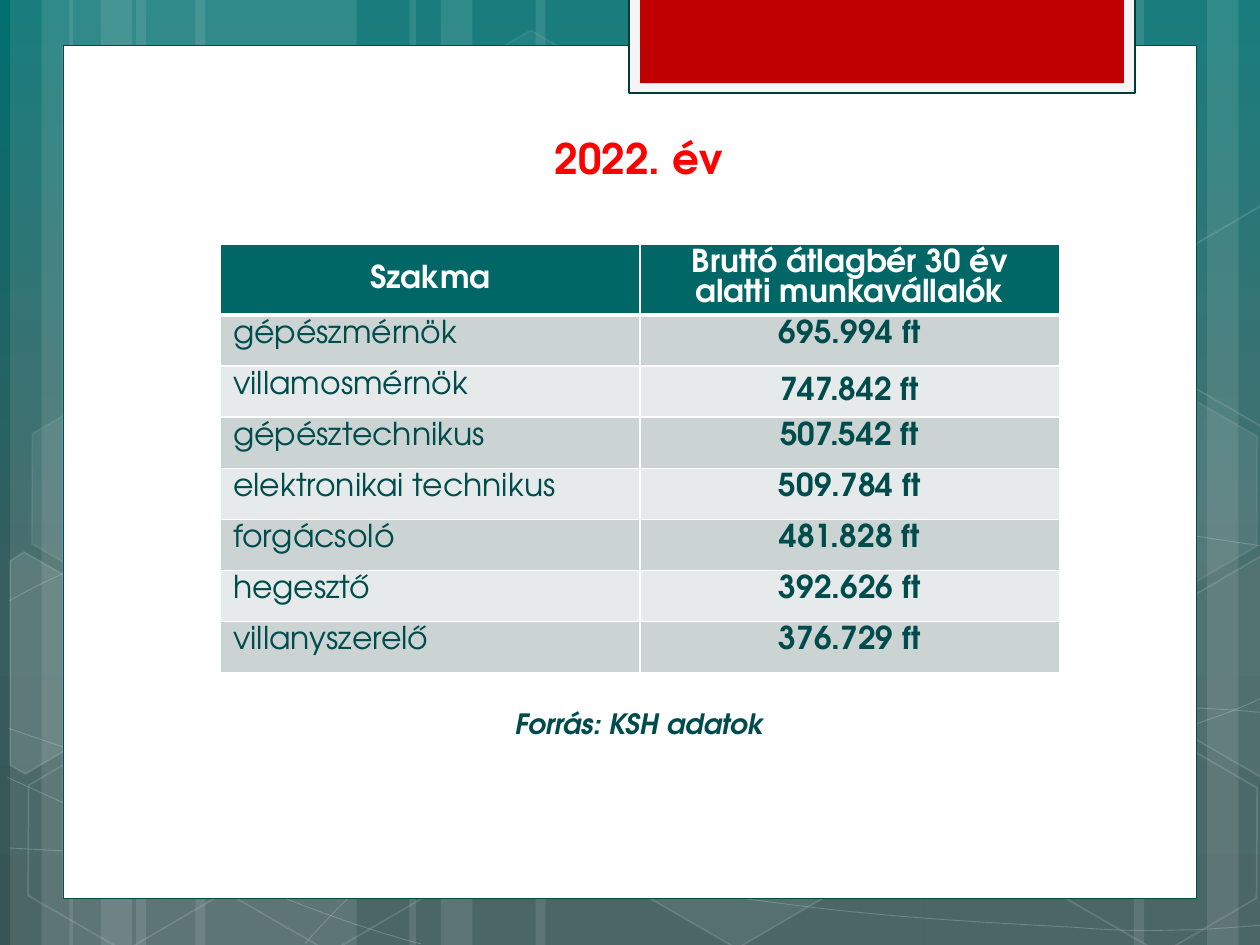
from copy import deepcopy
from dataclasses import dataclass
from math import cos, radians, sin
from lxml import etree
from pptx import Presentation
from pptx import util as u
from pptx.dml.color import RGBColor
from pptx.enum import shapes, text
from pptx.oxml.ns import qn

SCALE = 9144
TILT = 30


@dataclass(frozen=True)
class Theme:
    font: str = "TeX Gyre Adventor"
    white: str = "FFFFFF"
    ink: str = "004C4C"
    tab: str = "C00000"
    tab_rim: str = "F5F5F5"
    tab_edge: str = "003B3C"
    year: str = "FF0000"
    header: str = "006666"
    bands: tuple = ("CCD3D3", "E7EAEA")
    sky: tuple = ((0, "006F6F"), (0.62, "375D5D"), (1, "385555"))
    year_size: int = 24
    table_size: int = 18
    credit_size: int = 16


THEME = Theme()
RECT = shapes.MSO_SHAPE.RECTANGLE
CENTER = text.PP_ALIGN.CENTER
MIDDLE = text.MSO_ANCHOR.MIDDLE

STRIPES = [(108, 175), (8, 50), (33, 83), (155, 175), (55, 50), (80, 83),
           (733, 175), (958, 50), (900, 83), (425, 308), (325, 50), (350, 83)]

WAVES = [
    [(7, 673), (61, 676), (115, 679), (190, 678), (265, 677), (358, 675), (458, 665),
     (558, 655), (700, 636), (792, 617), (883, 598), (977, 568), (1007, 551)],
    [(7, 477), (36, 461), (65, 446), (121, 431), (178, 416), (259, 394), (347, 387),
     (436, 380), (544, 379), (654, 387), (764, 395), (947, 426), (1007, 434)],
    [(6, 617), (127, 672), (247, 727), (334, 749)],
    [(7, 578), (38, 589), (70, 600), (128, 616), (186, 631), (273, 656), (357, 673),
     (440, 690), (545, 708), (628, 718), (711, 729), (800, 733), (853, 736),
     (905, 740), (919, 738), (945, 738), (971, 737), (989, 735), (1007, 734)],
    [(242, 749), (260, 729), (278, 709), (302, 691), (326, 673), (360, 653), (388, 639),
     (416, 625), (433, 619), (470, 609), (506, 599), (573, 585), (608, 578),
     (644, 571), (649, 571), (680, 569), (711, 566), (760, 563), (794, 562),
     (829, 561), (886, 562), (886, 562), (908, 562), (931, 562), (953, 562),
     (971, 563), (988, 564), (1006, 566)],
]

HEXAGONS = [(334, 36, 4, 8), (497, 589, 6, 12), (11, 591, 0, 12), (14, 312, 7, 8),
            (174, 592, 0, 12), (753, 453, 10, 12), (834, 593, 0, 12), (834, 314, 7, 8)]

CUT_HEXAGONS = [
    ([(8, 445), (19, 438), (96, 482), (95, 570), (20, 614), (8, 607)], (36, 535), 10),
    ([(926, 485), (1001, 441), (1009, 446), (1009, 613), (1002, 617), (926, 573)],
     (985, 520), 4),
    ([(926, 207), (1001, 163), (1010, 168), (1009, 335), (1002, 339), (926, 295)],
     (985, 241), 0),
]

WAGES = [("Szakma", "Bruttó átlagbér 30 év alatti munkavállalók"),
         ("gépészmérnök", "695.994 ft"),
         ("villamosmérnök", "747.842 ft"),
         ("gépésztechnikus", "507.542 ft"),
         ("elektronikai technikus", "509.784 ft"),
         ("forgácsoló", "481.828 ft"),
         ("hegesztő", "392.626 ft"),
         ("villanyszerelő", "376.729 ft")]
MIDDLE_CELLS = {(0, 0), (2, 1)}


def px(length):
    return u.Emu(round(length * SCALE))


def rgb(value):
    return RGBColor.from_string(value)


def assign(target, values):
    for key, value in values.items():
        setattr(target, key, value)


def paint(part, fill=None, opacity=100, line=None, width=1, line_opacity=100):
    part.shadow.inherit = False
    for target, color, alpha in ((part.fill, fill, opacity),
                                 (part.line.fill, line, line_opacity)):
        if color is None or alpha == 0:
            target.background()
            continue
        target.solid()
        target.fore_color.rgb = rgb(color)
        if alpha < 100:
            tint = target._xPr.find(qn("a:solidFill"))[0]
            etree.SubElement(tint, qn("a:alpha"), val=str(alpha * 1000))
    if line:
        part.line.width = u.Pt(width)


def block(slide, box, kind=RECT, **look):
    part = slide.shapes.add_shape(kind, *map(px, box))
    paint(part, **look)
    return part


def outline(slide, points, origin, close, **look):
    placed = [(px(origin[0] + x), px(origin[1] + y)) for x, y in points]
    builder = slide.shapes.build_freeform(*placed[0], scale=1.0)
    builder.add_line_segments(placed[1:], close=close)
    part = builder.convert_to_shape()
    paint(part, **look)
    return part


def bend(part):
    segments = part._element.findall(".//" + qn("a:lnTo"))
    for start in range(0, len(segments), 3):
        first, *rest = segments[start:start + 3]
        first.addprevious(curve := etree.Element(qn("a:cubicBezTo")))
        for segment in (first, *rest):
            curve.append(segment[0])
            segment.getparent().remove(segment)


def untilt(point, pivot):
    dx, dy = point[0] - pivot[0], point[1] - pivot[1]
    c, s = cos(radians(TILT)), sin(radians(TILT))
    return pivot[0] + dx * c + dy * s, pivot[1] - dx * s + dy * c


def write(frame, words, size, color, align=None, **style):
    paragraph = frame.paragraphs[0]
    paragraph.alignment = align
    run = paragraph.add_run()
    run.text = words
    assign(run.font, {"name": THEME.font, "size": u.Pt(size), **style})
    run.font.color.rgb = rgb(color)


def sky(slide):
    fill = slide.background.fill
    fill.gradient()
    fill.gradient_angle = 270
    stops = slide._element.find(".//" + qn("a:gsLst"))
    stops.insert(1, deepcopy(stops[0]))
    for stop, (position, color) in zip(fill.gradient_stops, THEME.sky):
        stop.position = position
        stop.color.rgb = rgb(color)


def backdrop(slide, box):
    left, top, _, height = box
    for x, width in STRIPES:
        block(slide, (left + x, top, width, height), fill=THEME.white, opacity=10)
    for knots in WAVES:
        bend(outline(slide, knots, (left, top), False,
                     line=THEME.white, width=0.5, line_opacity=20))
    for x, y, opacity, line_opacity in HEXAGONS:
        hexagon = block(slide, (left + x, top + y, 175, 152), shapes.MSO_SHAPE.HEXAGON,
                        fill=THEME.white, opacity=opacity,
                        line=THEME.white, line_opacity=line_opacity)
        hexagon.rotation = TILT
        hexagon.adjustments[0] = 0.285
    for points, pivot, opacity in CUT_HEXAGONS:
        corners = [untilt(point, pivot) for point in points]
        outline(slide, corners, (left, top), True, fill=THEME.white, opacity=opacity,
                line=THEME.white, line_opacity=12).rotation = TILT


def sheet(slide, box):
    left, top, _, _ = box
    block(slide, box, fill=THEME.white, line=THEME.ink, width=0.5)
    block(slide, (left + 449, top - 38, 402, 76), fill=THEME.tab_rim,
          line=THEME.tab_edge, width=1.25)
    block(slide, (left + 458, top - 38, 384, 68), fill=THEME.tab)


def caption(slide, box, words, size, color, **style):
    frame = slide.shapes.add_textbox(*map(px, box)).text_frame
    frame.word_wrap = True
    write(frame, words, size, color, CENTER, **style)


def rule_cell(cell, row):
    widths = {"L": 1, "R": 1, "T": 3 if row == 1 else 1, "B": 3 if row == 0 else 1}
    properties = cell._tc.get_or_add_tcPr()
    for index, (side, width) in enumerate(widths.items()):
        edge = etree.Element(qn("a:ln" + side), w=str(u.Pt(width)))
        solid = etree.SubElement(edge, qn("a:solidFill"))
        etree.SubElement(solid, qn("a:srgbClr"), val=THEME.white)
        properties.insert(index, edge)


def wage_table(slide, box, header_height):
    table = slide.shapes.add_table(len(WAGES), 2, *map(px, box)).table
    row_height = (box[3] - header_height) / (len(WAGES) - 1)
    for column in table.columns:
        column.width = px(box[2] / 2)
    for r, entry in enumerate(WAGES):
        table.rows[r].height = px(row_height if r else header_height)
        for c, words in enumerate(entry):
            cell = table.cell(r, c)
            assign(cell, {"margin_left": px(10), "margin_right": px(10),
                          "margin_top": px(4), "margin_bottom": px(4)})
            if (r, c) in MIDDLE_CELLS:
                cell.vertical_anchor = MIDDLE
            cell.fill.solid()
            cell.fill.fore_color.rgb = rgb(THEME.bands[(r - 1) % 2] if r else THEME.header)
            rule_cell(cell, r)
            write(cell.text_frame, words, THEME.table_size,
                  THEME.ink if r else THEME.white,
                  text.PP_ALIGN.LEFT if r and not c else CENTER, bold=not r or c == 1)


def main():
    deck = Presentation()
    assign(deck, {"slide_width": px(1000), "slide_height": px(750)})
    slide = deck.slides.add_slide(deck.slide_layouts[6])
    sky(slide)
    backdrop(slide, (0, 0, 1000, 750))
    sheet(slide, (50, 36, 900, 677))
    wage_table(slide, (175, 194, 666, 340), 56)
    caption(slide, (279, 556, 457, 37), "Forrás: KSH adatok",
            THEME.credit_size, THEME.ink, bold=True, italic=True)
    caption(slide, (330, 100, 354, 50), "2022. év", THEME.year_size, THEME.year, bold=True)
    deck.save("out.pptx")


if __name__ == "__main__":
    main()
